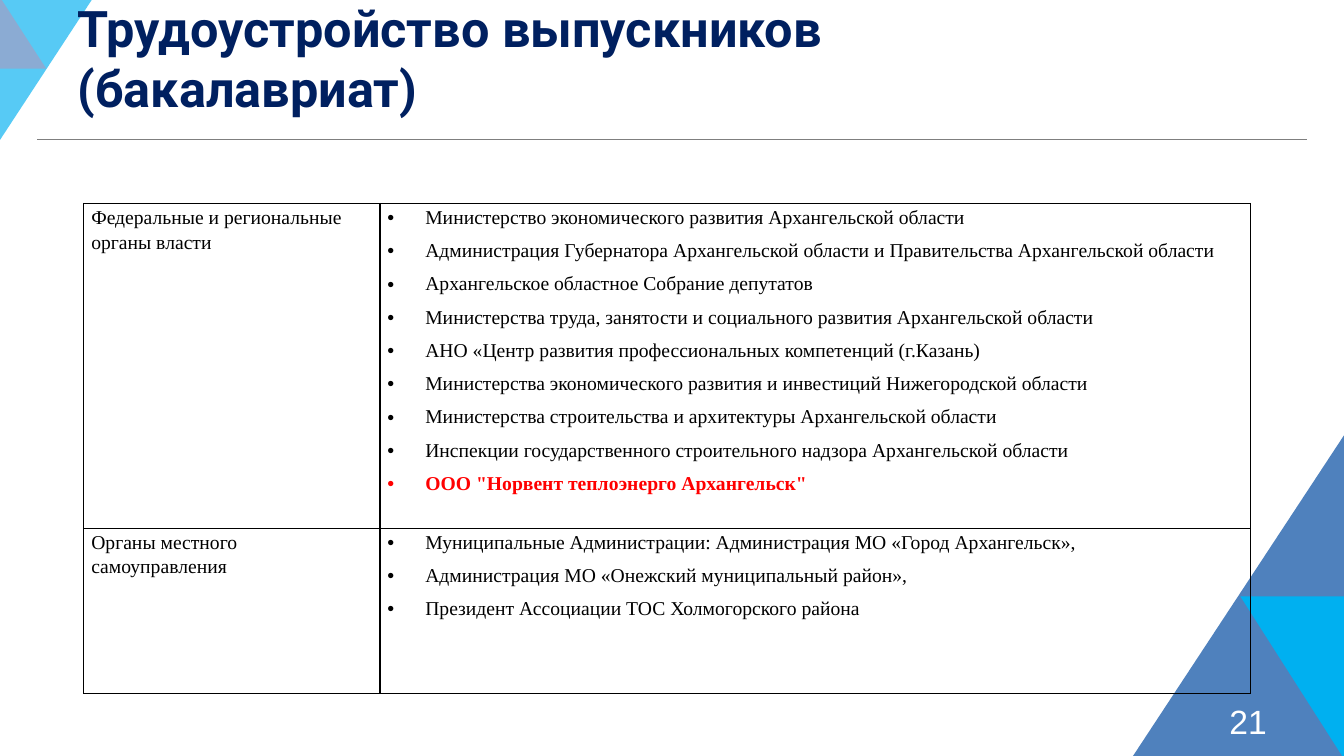
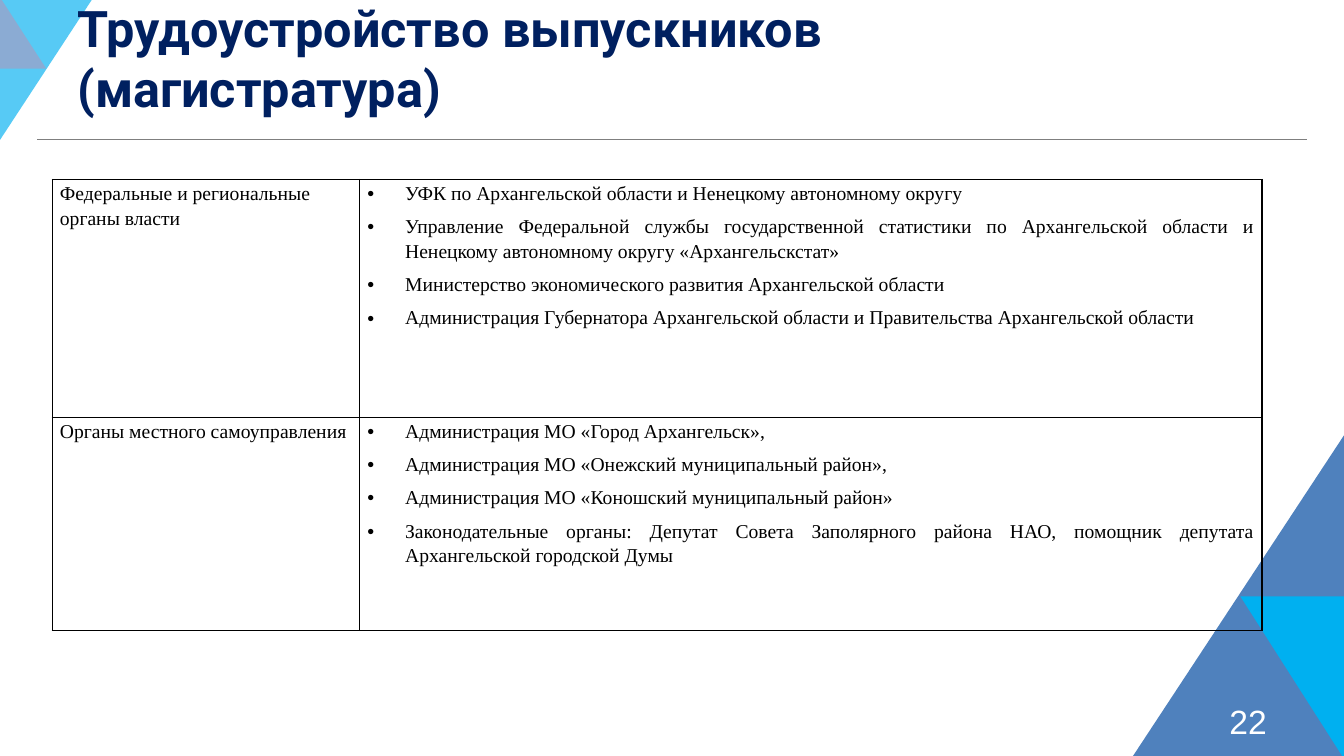
from lxml.etree import SubElement
from pptx import Presentation
from pptx.dml.color import RGBColor
from pptx.enum.shapes import MSO_CONNECTOR, MSO_SHAPE
from pptx.enum.text import MSO_ANCHOR as Anchor, PP_ALIGN as Align
from pptx.oxml.ns import qn
from pptx.util import Pt

WIDTH, HEIGHT = 960, 540
NAVY, BLUE, SKY, WHITE, BLACK, RED, GREY = (
    "002060", "4F81BD", "00B0F0", "FFFFFF", "000000", "FF0000", "7F7F7F")

TITLE_FONT = {"name": "Roboto", "size": Pt(36), "bold": True}
NUMBER_FONT = {"name": "Arial", "size": Pt(24), "bold": False}
CELL_FONT = {"name": "Times New Roman", "size": Pt(14), "bold": False}
HIGHLIGHT_FONT = {**CELL_FONT, "bold": True}
LABEL_FORMAT = {"line_spacing": 1.15, "alignment": Align.LEFT}
ITEM_FORMAT = {"line_spacing": 1.15, "alignment": Align.JUSTIFY, "space_after": Pt(6)}
CELL_FORMAT = {"margin_left": Pt(5.4), "margin_right": Pt(5.4),
               "margin_top": 0, "margin_bottom": 0, "vertical_anchor": Anchor.TOP}

# Rotation that brings the right angle of a triangle into a corner
CORNER_ROTATION = {"bottom left": 0, "top left": 90, "top right": 180, "bottom right": 270}

FEDERAL = "Федеральные и региональные органы власти"
LOCAL = "Органы местного самоуправления"
ECONOMY = "Министерство экономического развития Архангельской области"
GOVERNOR = ("Администрация Губернатора Архангельской области "
            "и Правительства Архангельской области")
ONEGA = "Администрация МО «Онежский муниципальный район»,"
HIGHLIGHTED = 'ООО "Норвент теплоэнерго Архангельск"'

SLIDES = [
    {"number": 21,
     "title": "Трудоустройство выпускников (бакалавриат)",
     "box": (59.8, 145.4, 833.2, 350),
     "label_width": 211.6,
     "row_heights": (232, 118),
     "rows": [
         (FEDERAL, [
             ECONOMY,
             GOVERNOR,
             "Архангельское областное Собрание депутатов",
             "Министерства труда, занятости и социального развития Архангельской области",
             "АНО «Центр развития профессиональных компетенций (г.Казань)",
             "Министерства экономического развития и инвестиций Нижегородской области",
             "Министерства строительства и архитектуры Архангельской области",
             "Инспекции государственного строительного надзора Архангельской области",
             HIGHLIGHTED]),
         (LOCAL, [
             "Муниципальные Администрации: Администрация МО «Город Архангельск»,",
             ONEGA,
             "Президент Ассоциации ТОС Холмогорского района"])]},
    {"number": 22,
     "title": "Трудоустройство выпускников (магистратура)",
     "box": (37.4, 128.2, 864, 322),
     "label_width": 219.6,
     "row_heights": (170, 152),
     "rows": [
         (FEDERAL, [
             "УФК по Архангельской области и Ненецкому автономному округу",
             "Управление Федеральной службы государственной статистики по Архангельской "
             "области и Ненецкому автономному округу «Архангельскстат»",
             ECONOMY,
             GOVERNOR]),
         (LOCAL, [
             "Администрация МО «Город Архангельск»,",
             ONEGA,
             "Администрация МО «Коношский муниципальный район»",
             "Законодательные органы: Депутат Совета Заполярного района НАО, "
             "помощник депутата Архангельской городской Думы"])]},
]


def set_color(color_format, value):
    color_format.rgb = RGBColor.from_string(value)


def apply_format(target, values):
    for name, value in values.items():
        setattr(target, name, value)


def write(paragraph, text, font, color):
    run = paragraph.add_run()
    run.text = text
    apply_format(run.font, font)
    set_color(run.font.color, color)


def add_filled(slide, kind, box, color):
    shape = slide.shapes.add_shape(kind, *map(Pt, box))
    shape.shadow.inherit = False
    shape.fill.solid()
    set_color(shape.fill.fore_color, color)
    shape.line.fill.background()
    return shape


def add_triangle(slide, box, corner, color):
    """Fill the box with a triangle whose right angle is in the corner."""
    left, top, width, height = box
    rotation = CORNER_ROTATION[corner]
    if rotation % 180:
        left, top = left + (width - height) / 2, top + (height - width) / 2
        width, height = height, width
    shape = add_filled(slide, MSO_SHAPE.RIGHT_TRIANGLE, (left, top, width, height), color)
    shape.rotation = rotation


def add_text(slide, box, text, font, color, anchor, alignment):
    frame = slide.shapes.add_textbox(*map(Pt, box)).text_frame
    apply_format(frame, {"word_wrap": True, "vertical_anchor": anchor})
    paragraph = frame.paragraphs[0]
    paragraph.alignment = alignment
    write(paragraph, text, font, color)


def add_top_corner(slide, left, top):
    add_triangle(slide, (left, top, 66.8, 102), "top left", SKY)
    add_triangle(slide, (left, top, 33, 51), "bottom left", BLUE)
    # Pale veil over the triangles
    veil = add_filled(slide, MSO_SHAPE.RECTANGLE, (left, top - 1, 123, 159), WHITE)
    color = veil.fill._xPr.find(qn("a:solidFill"))[0]
    SubElement(color, qn("a:alpha"), val="34000")


def add_bottom_corner(slide, right, bottom):
    add_triangle(slide, (right - 152, bottom - 231, 152, 231), "bottom right", BLUE)
    add_triangle(slide, (right - 74, bottom - 116, 74, 116), "top right", SKY)


def add_rule(slide, left, right, top):
    line = slide.shapes.add_connector(
        MSO_CONNECTOR.STRAIGHT, Pt(left), Pt(top), Pt(right), Pt(top))
    line.line.width = Pt(0.75)
    set_color(line.line.color, GREY)
    SubElement(line._element.spPr, qn("a:effectLst"))


def add_frame(slide, title, number):
    """Corners, rule, page number and title shared by the slides."""
    add_top_corner(slide, 0, -2)
    add_bottom_corner(slide, WIDTH, HEIGHT + 2)
    add_rule(slide, 26.6, 933.8, 99.8)
    add_text(slide, (688, 500.4, 224, 29), str(number),
             NUMBER_FONT, WHITE, Anchor.MIDDLE, Align.RIGHT)
    add_text(slide, (48.2, 9.4, 771.8, 78.4), title,
             TITLE_FONT, NAVY, Anchor.BOTTOM, Align.LEFT)


def add_bullet(paragraph):
    properties = paragraph._p.get_or_add_pPr()
    properties.set("marL", str(Pt(27)))
    properties.set("indent", str(Pt(-27)))
    SubElement(properties, qn("a:buFont"), typeface="Arial")
    SubElement(properties, qn("a:buChar"), char="•")
    tabs = SubElement(properties, qn("a:tabLst"))
    SubElement(tabs, qn("a:tab"), pos=str(Pt(17)), algn="l")


def format_cell(cell):
    apply_format(cell, CELL_FORMAT)
    properties = cell._tc.get_or_add_tcPr()
    for side in ("lnL", "lnR", "lnT", "lnB"):
        border = SubElement(properties, qn(f"a:{side}"), w=str(Pt(1)))
        fill = SubElement(border, qn("a:solidFill"))
        SubElement(fill, qn("a:srgbClr"), val=BLACK)
    cell.fill.background()


def fill_label(cell, text):
    paragraph = cell.text_frame.paragraphs[0]
    apply_format(paragraph, LABEL_FORMAT)
    write(paragraph, text, CELL_FONT, BLACK)


def fill_items(cell, items):
    frame = cell.text_frame
    for index, item in enumerate(items):
        paragraph = frame.add_paragraph() if index else frame.paragraphs[0]
        add_bullet(paragraph)
        apply_format(paragraph, ITEM_FORMAT)
        if item == HIGHLIGHTED:
            write(paragraph, item, HIGHLIGHT_FONT, RED)
        else:
            write(paragraph, item, CELL_FONT, BLACK)


def add_employers(slide, box, label_width, row_heights, rows):
    table = slide.shapes.add_table(len(rows), 2, *map(Pt, box)).table
    apply_format(table, {"first_row": False, "horz_banding": False})
    for column, width in zip(table.columns, (label_width, box[2] - label_width)):
        column.width = Pt(width)
    for row, height, (label, items) in zip(table.rows, row_heights, rows):
        row.height = Pt(height)
        for cell in row.cells:
            format_cell(cell)
        fill_label(row.cells[0], label)
        fill_items(row.cells[1], items)


def main():
    presentation = Presentation()
    apply_format(presentation, {"slide_width": Pt(WIDTH), "slide_height": Pt(HEIGHT)})
    for content in SLIDES:
        slide = presentation.slides.add_slide(presentation.slide_layouts[6])
        add_frame(slide, content["title"], content["number"])
        add_employers(slide, content["box"], content["label_width"],
                      content["row_heights"], content["rows"])
    presentation.save("out.pptx")


if __name__ == "__main__":
    main()
